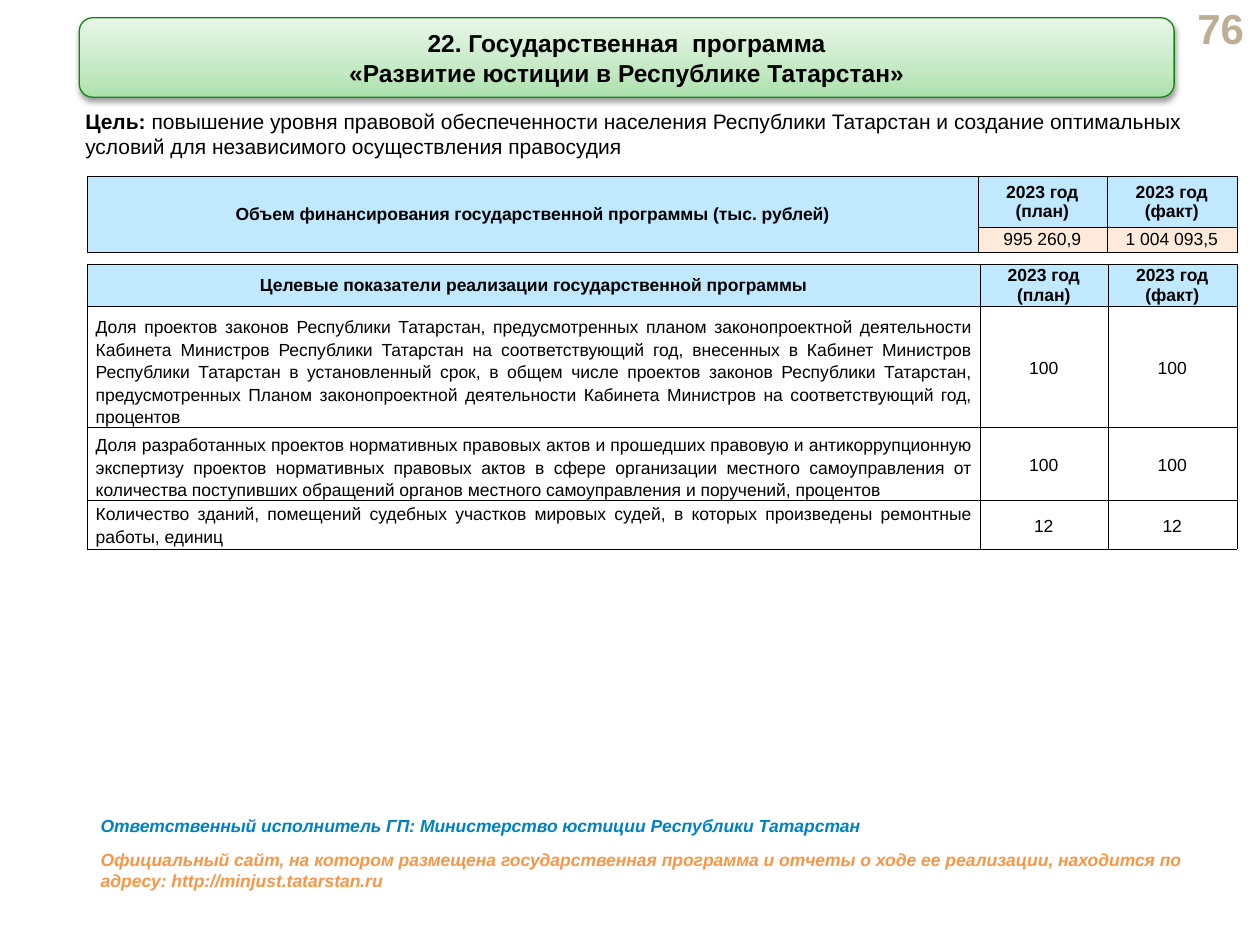
from lxml import etree
from pptx import Presentation
from pptx.dml.color import RGBColor
from pptx.enum import shapes, text
from pptx.oxml import ns
from pptx.util import Cm, Pt

FONT = "Arial"
BLACK, HEADER, MONEY, WHITE = "000000", "C0E9FF", "FDEADA", "FFFFFF"
LEFT, CENTER, RIGHT, JUSTIFY = (
    text.PP_ALIGN.LEFT, text.PP_ALIGN.CENTER, text.PP_ALIGN.RIGHT, text.PP_ALIGN.JUSTIFY)
TOP, MIDDLE, BOTTOM = (
    text.MSO_ANCHOR.TOP, text.MSO_ANCHOR.MIDDLE, text.MSO_ANCHOR.BOTTOM)
PLAN, FACT = "2023 год\n(план)", "2023 год\n(факт)"


def color(value):
    return RGBColor.from_string(value)


def add_child(parent, tag, **attributes):
    return etree.SubElement(parent, ns.qn(tag), attributes)


def add_color(parent, value):
    return add_child(parent, "a:srgbClr", val=value)


def add_run(paragraph, words, size, bold=False, italic=False, ink=BLACK):
    for index, line in enumerate(words.split("\n")):
        if index:
            paragraph.add_line_break()
        run = paragraph.add_run()
        run.text = line
        run.font.name = FONT
        run.font.size = Pt(size)
        run.font.bold = bold
        run.font.italic = italic
        run.font.color.rgb = color(ink)


def place(shape, left, top, width, height):
    shape.left, shape.top, shape.width, shape.height = map(Cm, (left, top, width, height))


def add_text(slide, box, runs, align=LEFT, anchor=TOP):
    frame = slide.shapes.add_textbox(*map(Cm, box)).text_frame
    frame.word_wrap = True
    frame.vertical_anchor = anchor
    paragraph = frame.paragraphs[0]
    paragraph.alignment = align
    for run in runs:
        add_run(paragraph, **run)


def add_banner(slide, box):
    banner = slide.shapes.add_shape(shapes.MSO_SHAPE.ROUNDED_RECTANGLE, *map(Cm, box))
    banner.line.color.rgb = color("108812")
    banner.line.width = Pt(0.75)
    banner.fill.gradient()
    banner.fill.gradient_angle = 90
    stops = banner.element.spPr.find(".//" + ns.qn("a:gsLst"))
    for stop in list(stops):
        stops.remove(stop)
    for percent, value in ((0, "ABE1AB"), (35, "C5E9C5"), (100, "E8F7E8")):
        add_color(add_child(stops, "a:gs", pos=str(percent * 1000)), value)
    banner.shadow.inherit = False
    effects = banner.element.spPr.find(ns.qn("a:effectLst"))
    shadow = add_child(effects, "a:outerShdw", blurRad="40000", dist="20000",
                       dir="5400000", rotWithShape="0")
    add_child(add_color(shadow, BLACK), "a:alpha", val="38000")
    return banner


def add_title(slide, box, lines):
    title = slide.shapes.title
    title.element.addprevious(add_banner(slide, box).element)
    place(title, *box)
    frame = title.text_frame
    frame.word_wrap = True
    frame.auto_size = text.MSO_AUTO_SIZE.NONE
    frame.vertical_anchor = MIDDLE
    for index, line in enumerate(lines):
        paragraph = frame.add_paragraph() if index else frame.paragraphs[0]
        paragraph.alignment = CENTER
        paragraph.space_before = Pt(0)
        add_run(paragraph, line, 14, bold=True)


def add_borders(cell):
    properties = cell._tc.get_or_add_tcPr()
    for side in ("a:lnL", "a:lnR", "a:lnT", "a:lnB"):
        line = add_child(properties, side, w=str(Pt(0.25)))
        add_color(add_child(line, "a:solidFill"), BLACK)


def add_grid(slide, left, top, widths, heights):
    frame = slide.shapes.add_table(len(heights), len(widths), Cm(left), Cm(top),
                                   Cm(sum(widths)), Cm(sum(heights)))
    table = frame.table
    table.first_row = table.horz_banding = False
    for column, width in zip(table.columns, widths):
        column.width = Cm(width)
    for row, height in zip(table.rows, heights):
        row.height = Cm(height)
    for cell in table.iter_cells():
        add_borders(cell)
        cell.margin_top = cell.margin_bottom = 0
    return table


def fill_cell(cell, words, fill, side=0.15, bold=False, align=CENTER,
              anchor=MIDDLE, spacing=1.0):
    cell.fill.solid()
    cell.fill.fore_color.rgb = color(fill)
    cell.margin_left = cell.margin_right = Cm(side)
    cell.vertical_anchor = anchor
    paragraph = cell.text_frame.paragraphs[0]
    paragraph.alignment = align
    paragraph.line_spacing = spacing
    add_run(paragraph, words, 10, bold=bold)


def fill_header(table, heading, side):
    for column, words in enumerate((heading, PLAN, FACT)):
        fill_cell(table.cell(0, column), words, HEADER, side, bold=True)


def add_funding(slide):
    funding = add_grid(slide, 1.75, 3.56, (17.96, 2.6, 2.62), (1.02, 0.51))
    funding.cell(0, 0).merge(funding.cell(1, 0))
    fill_header(funding, "Объем финансирования государственной программы (тыс. рублей)", 0.15)
    for column, amount in enumerate(("995 260,9", "1 004 093,5"), 1):
        fill_cell(funding.cell(1, column), amount, MONEY, 0.03)


def add_indicators(slide):
    indicators = (
        ("Доля проектов законов Республики Татарстан, предусмотренных планом "
         "законопроектной деятельности Кабинета Министров Республики Татарстан на "
         "соответствующий год, внесенных в Кабинет Министров Республики Татарстан в "
         "установленный срок, в общем числе проектов законов Республики Татарстан, "
         "предусмотренных Планом законопроектной деятельности Кабинета Министров на "
         "соответствующий год, процентов", "100", "100", BOTTOM),
        ("Доля разработанных проектов нормативных правовых актов и прошедших правовую и "
         "антикоррупционную экспертизу проектов нормативных правовых актов в сфере "
         "организации местного самоуправления от количества поступивших обращений "
         "органов местного самоуправления и поручений, процентов", "100", "100", BOTTOM),
        ("Количество зданий, помещений судебных участков мировых судей, в которых "
         "произведены ремонтные работы, единиц", "12", "12", MIDDLE),
    )
    targets = add_grid(slide, 1.75, 5.33, (18, 2.58, 2.6), (0.85, 2.44, 1.47, 0.97))
    fill_header(targets, "Целевые показатели реализации государственной программы", 0.1)
    for row, (indicator, plan, fact, anchor) in enumerate(indicators, 1):
        fill_cell(targets.cell(row, 0), indicator, WHITE, 0.18,
                  align=JUSTIFY, anchor=anchor, spacing=1.15)
        for column, value in enumerate((plan, fact), 1):
            fill_cell(targets.cell(row, column), value, WHITE, 0.18, spacing=1.15)


def main():
    deck = Presentation()
    deck.slide_width, deck.slide_height = Cm(25.4), Cm(19.05)
    slide = deck.slides.add_slide(deck.slide_layouts[5])
    add_text(slide, (23.7, 0.13, 1.63, 0.86),
             [dict(words="76", size=24, bold=True, ink="BFAE96")], RIGHT, MIDDLE)
    add_funding(slide)
    add_indicators(slide)
    add_text(slide, (1.47, 2.06, 23.16, 1.27), [
        dict(words="Цель: ", size=12, bold=True),
        dict(words="повышение уровня правовой обеспеченности населения Республики "
                   "Татарстан и создание оптимальных условий для независимого "
                   "осуществления правосудия", size=12)], anchor=MIDDLE)
    add_title(slide, (1.6, 0.36, 22.07, 1.6), (
        "22. Государственная  программа", "«Развитие юстиции в Республике Татарстан»"))
    notices = (
        ((1.78, 16.31, 22.71, 0.69), "0081C5",
         "Ответственный исполнитель ГП: Министерство юстиции Республики Татарстан"),
        ((1.78, 16.99, 22.89, 1.12), "F79646",
         "Официальный сайт, на котором размещена государственная программа и отчеты "
         "о ходе ее реализации, находится по адресу: http://minjust.tatarstan.ru"),
    )
    for box, ink, words in notices:
        add_text(slide, box, [dict(words=words, size=10, bold=True, italic=True, ink=ink)])
    deck.save("out.pptx")


if __name__ == "__main__":
    main()
